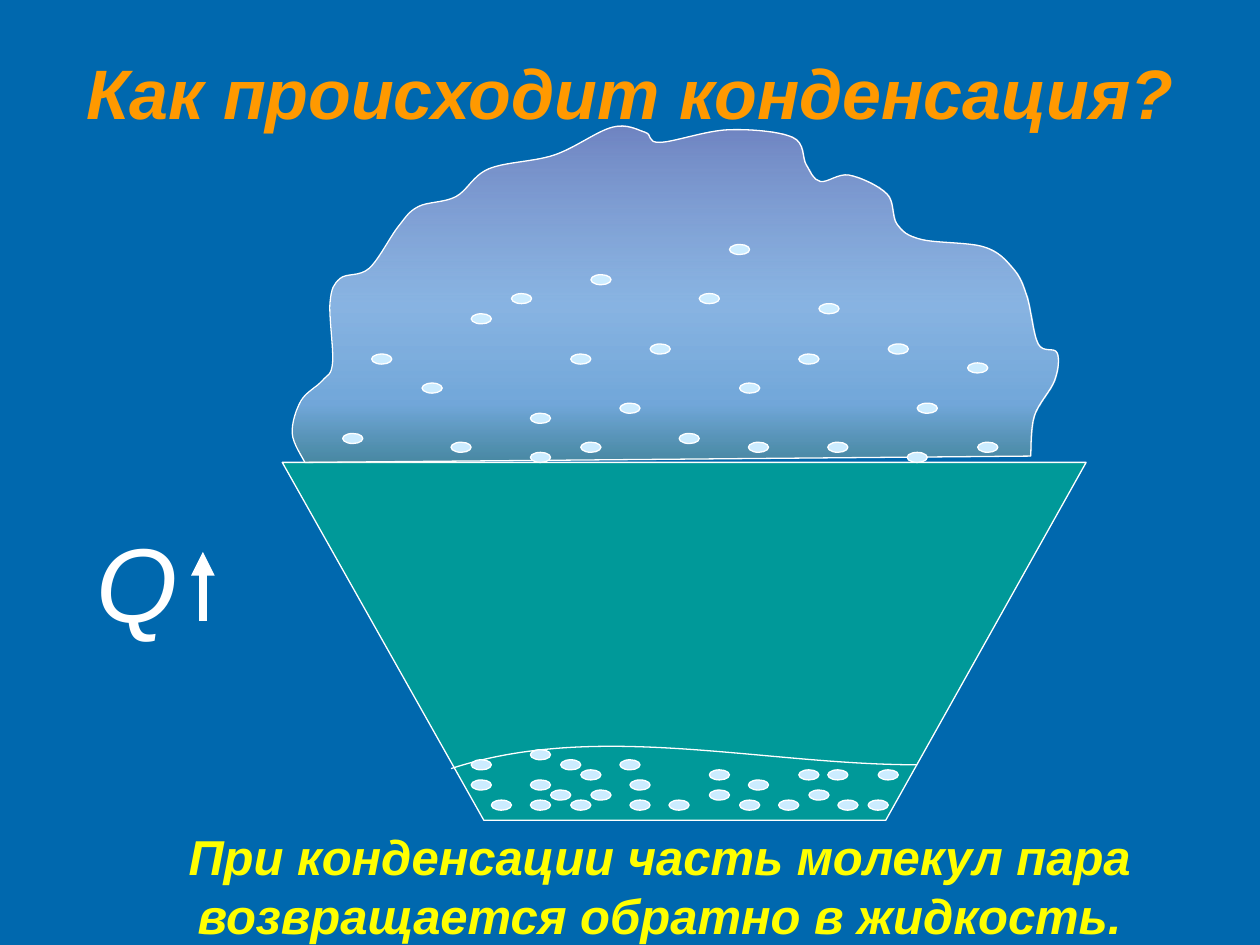
from lxml.etree import SubElement
from pptx import Presentation
from pptx.dml.color import RGBColor
from pptx.enum.shapes import MSO_CONNECTOR, MSO_SHAPE
from pptx.enum.text import MSO_ANCHOR, MSO_AUTO_SIZE, PP_ALIGN
from pptx.oxml.ns import qn
from pptx.util import Inches, Pt

BLUE = RGBColor(0x00, 0x68, 0xAE)
ORANGE = RGBColor(0xFF, 0x99, 0x00)
YELLOW = RGBColor(0xFF, 0xFF, 0x00)
WHITE = RGBColor(0xFF, 0xFF, 0xFF)
TEAL = RGBColor(0x00, 0x99, 0x99)
PALE = RGBColor(0xCC, 0xEC, 0xFF)

# Gradient of the vapour: position %, colour, opacity %
MIST = [(0, "8488C4", 83), (53, "D4DEFF", 64), (83, "D4DEFF", 53), (100, "96AB94", 47)]

BOWL = [(2.24, 3.67), (3.84, 6.51), (7.03, 6.51), (8.62, 3.67)]
# Start, two control points, end
WAVE = [(3.58, 6.1), (4.74, 5.72), (6.05, 6.07), (7.28, 6.07)]
# Knots of a smooth edge
CLOUD = [
    (2.42, 3.67), (2.32, 3.44), (2.39, 3.18), (2.56, 3.02), (2.64, 2.88),
    (2.62, 2.4), (2.7, 2.21), (2.93, 2.13), (3.16, 1.8), (3.32, 1.64),
    (3.62, 1.56), (3.88, 1.34), (4.4, 1.23), (4.86, 1.01), (5.12, 1.05),
    (5.24, 1.13), (5.78, 1.03), (6.29, 1.09), (6.4, 1.31), (6.51, 1.44),
    (6.74, 1.39), (7.04, 1.54), (7.12, 1.78), (7.31, 1.9), (7.81, 1.96),
    (8.04, 2.13), (8.15, 2.35), (8.24, 2.73), (8.39, 2.8), (8.37, 3.02),
    (8.21, 3.3), (8.18, 3.62),
]

# Molecules: top of each row, then the left edges in it
VAPOUR = {
    1.94: [5.79], 2.18: [4.69], 2.33: [4.06, 5.55], 2.41: [6.5], 2.49: [3.74],
    2.73: [5.16, 7.05], 2.81: [2.95, 4.53, 6.34], 2.88: [7.68], 3.04: [3.35, 5.87],
    3.2: [4.92, 7.28], 3.28: [4.21], 3.44: [2.72, 5.39],
    3.51: [3.58, 4.61, 5.94, 6.57, 7.76], 3.59: [4.21, 7.2],
}
WATER = {
    5.95: [4.21], 6.03: [3.74, 4.45, 4.92], 6.11: [4.61, 5.63, 6.34, 6.57, 6.97],
    6.19: [3.74, 4.21, 5, 5.94], 6.27: [4.37, 4.69, 5.63, 6.42],
    6.35: [3.9, 4.21, 4.53, 5, 5.31, 5.87, 6.18, 6.65, 6.89],
}


def smooth(knots):
    """Return the knots with two control points between each pair."""
    padded = [knots[0], *knots, knots[-1]]
    points = [knots[0]]
    for a, b, c, d in zip(padded, padded[1:], padded[2:], padded[3:]):
        points.append(tuple(q + (r - p) / 6 for p, q, r in zip(a, b, c)))
        points.append(tuple(q - (r - p) / 6 for p, q, r in zip(b, c, d)))
        points.append(c)
    return points


def write(frame, text, size, color, bold=False, align=PP_ALIGN.LEFT, before=0):
    """Fill a text frame; before is the space above, in % of a line."""
    frame.word_wrap = True
    para = frame.paragraphs[0]
    para.alignment = align
    if before:
        gap = SubElement(para._p.get_or_add_pPr(), qn("a:spcBef"))
        SubElement(gap, qn("a:spcPct"), val=str(before * 1000))
    run = para.add_run()
    run.text = text
    font = run.font
    font.name, font.size, font.bold, font.italic = "Arial", Pt(size), bold, True
    font.color.rgb = color


class Board:
    def __init__(self, slide, edge=WHITE, width=0.75):
        self.slide, self.edge, self.width = slide, edge, width

    def style(self, shape, fill=None):
        shape.shadow.inherit = False
        if fill is None:
            shape.fill.background()
        else:
            shape.fill.solid()
            shape.fill.fore_color.rgb = fill
        shape.line.color.rgb = self.edge
        shape.line.width = Pt(self.width)
        return shape

    def title(self, text, box, **form):
        shape = self.slide.shapes.title
        shape.left, shape.top, shape.width, shape.height = map(Inches, box)
        shape.text_frame.vertical_anchor = MSO_ANCHOR.MIDDLE
        write(shape.text_frame, text, **form)

    def text(self, text, box, **form):
        frame = self.slide.shapes.add_textbox(*map(Inches, box)).text_frame
        frame.auto_size = MSO_AUTO_SIZE.SHAPE_TO_FIT_TEXT
        write(frame, text, **form)

    def outline(self, points, fill=None, close=True):
        start, *rest = [(Inches(x), Inches(y)) for x, y in points]
        maker = self.slide.shapes.build_freeform(*start)
        maker.add_line_segments(rest, close=close)
        return self.style(maker.convert_to_shape(), fill)

    def curve(self, points, close=True):
        shape = self.outline(points, close=close)
        # Join each three segments into one cubic curve
        lines = list(shape._element.iter(qn("a:lnTo")))
        for trio in zip(lines[::3], lines[1::3], lines[2::3]):
            bend = trio[0].makeelement(qn("a:cubicBezTo"))
            trio[0].addprevious(bend)
            for seg in trio:
                bend.append(seg[0])
                seg.getparent().remove(seg)
        return shape

    def fade(self, shape, stops):
        shape.fill.gradient()
        shape.fill.gradient_angle = 270
        bag = shape._element.spPr.find(qn("a:gradFill")).find(qn("a:gsLst"))
        for old in list(bag):
            bag.remove(old)
        for pos, color, alpha in stops:
            stop = SubElement(bag, qn("a:gs"), pos=str(pos * 1000))
            tint = SubElement(stop, qn("a:srgbClr"), val=color)
            SubElement(tint, qn("a:alpha"), val=str(alpha * 1000))

    def dots(self, rows):
        for top, lefts in rows.items():
            for left in lefts:
                box = map(Inches, (left, top, 0.16, 0.08))
                self.style(self.slide.shapes.add_shape(MSO_SHAPE.OVAL, *box), PALE)

    def arrow(self, start, end, width):
        ends = map(Inches, (*start, *end))
        line = self.slide.shapes.add_connector(MSO_CONNECTOR.STRAIGHT, *ends)
        line.line.color.rgb = self.edge
        line.line.width = Pt(width)
        SubElement(line.line._get_or_add_ln(), qn("a:tailEnd"), type="triangle")
        SubElement(line._element.spPr, qn("a:effectLst"))


def main():
    deck = Presentation()
    deck.slide_width, deck.slide_height = Inches(10), Inches(7.5)
    slide = deck.slides.add_slide(deck.slide_layouts[5])
    slide.background.fill.solid()
    slide.background.fill.fore_color.rgb = BLUE
    board = Board(slide)

    board.title("Как происходит конденсация?", (0.5, 0.3, 9, 0.85),
                size=40, color=ORANGE, bold=True, align=PP_ALIGN.CENTER)

    # Vessel and the vapour above it
    board.outline(BOWL, TEAL)
    board.fade(board.curve(smooth(CLOUD)), MIST)
    board.dots(VAPOUR)

    # Caption
    board.text("При конденсации часть молекул пара возвращается обратно в жидкость.",
               (0.51, 6.51, 9.45, 1.03), size=28, color=YELLOW, bold=True,
               align=PP_ALIGN.CENTER, before=50)

    # Water surface and its molecules
    board.curve(WAVE, close=False)
    board.dots(WATER)

    # Heat given off
    board.text("Q", (0.67, 4.06, 2.05, 1.1), size=60, color=WHITE, before=50)
    board.arrow((1.61, 4.93), (1.61, 4.38), 4.5)

    deck.save("out.pptx")


if __name__ == "__main__":
    main()
